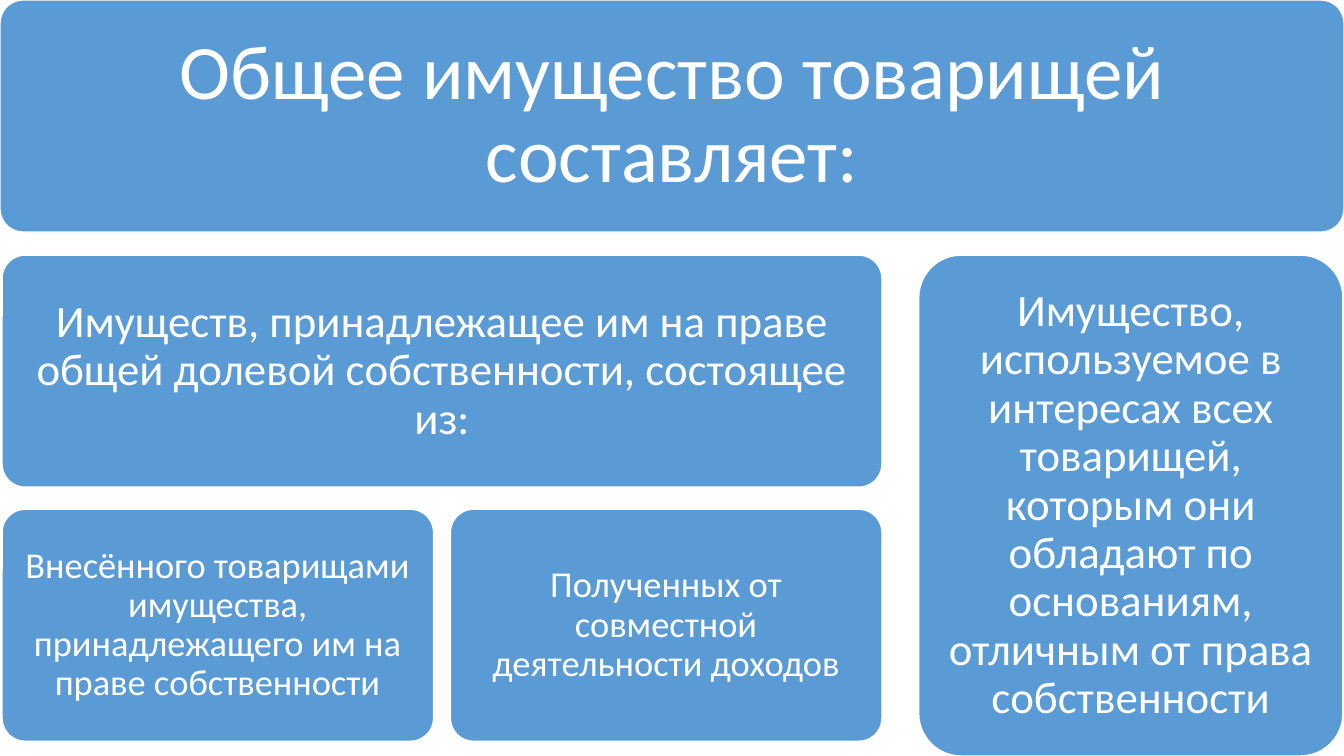
from pptx import Presentation, util as u
from pptx.dml.color import RGBColor
from pptx.enum import shapes, text

PX = 9525
COLORS = {"box": "5B9BD5", "white": "FFFFFF"}

presentation = Presentation()
presentation.slide_width = 1280 * PX
presentation.slide_height = 720 * PX
slide = presentation.slides.add_slide(presentation.slide_layouts[6])


def add_box(wording, left, top, width, height, size, inset):
    shape = slide.shapes.add_shape(
        shapes.MSO_SHAPE.ROUNDED_RECTANGLE,
        left * PX, top * PX, width * PX, height * PX)
    shape.adjustments[0] = 0.1
    shape.shadow.inherit = False
    shape.fill.solid()
    shape.fill.fore_color.rgb = RGBColor.from_string(COLORS["box"])
    shape.line.color.rgb = RGBColor.from_string(COLORS["white"])
    shape.line.width = u.Pt(1)
    frame = shape.text_frame
    frame.word_wrap = True
    frame.vertical_anchor = text.MSO_ANCHOR.MIDDLE
    frame.margin_left = frame.margin_right = inset * PX
    frame.margin_top = frame.margin_bottom = inset * PX
    paragraph = frame.paragraphs[0]
    paragraph.alignment = text.PP_ALIGN.CENTER
    paragraph.line_spacing = 0.9
    run = paragraph.add_run()
    run.text = wording
    run.font.name = "Calibri"
    run.font.size = u.Pt(size)
    run.font.color.rgb = RGBColor.from_string(COLORS["white"])


row_height = 221
row_tops = [0, 243, 485]
left_edge = 2
source_width = 411
source_gap = 16

add_box("Общее имущество товарищей составляет:",
        left=0, top=row_tops[0], width=1280, height=row_height, size=55, inset=22)
add_box("Имуществ, принадлежащее им на праве общей долевой собственности, состоящее из:",
        left=left_edge, top=row_tops[1], width=2 * source_width + source_gap,
        height=row_height, size=32, inset=12)

sources = [
    "Внесённого товарищами имущества, принадлежащего им на праве собственности",
    "Полученных от совместной деятельности доходов",
]
for column, source in enumerate(sources):
    add_box(source, left=left_edge + column * (source_width + source_gap),
            top=row_tops[2], width=source_width, height=row_height, size=26, inset=10)

add_box("Имущество, используемое в интересах всех товарищей, которым они обладают "
        "по основаниям, отличным от права собственности",
        left=875, top=row_tops[1], width=404, height=720 - row_tops[1], size=32, inset=12)

presentation.save("out.pptx")
